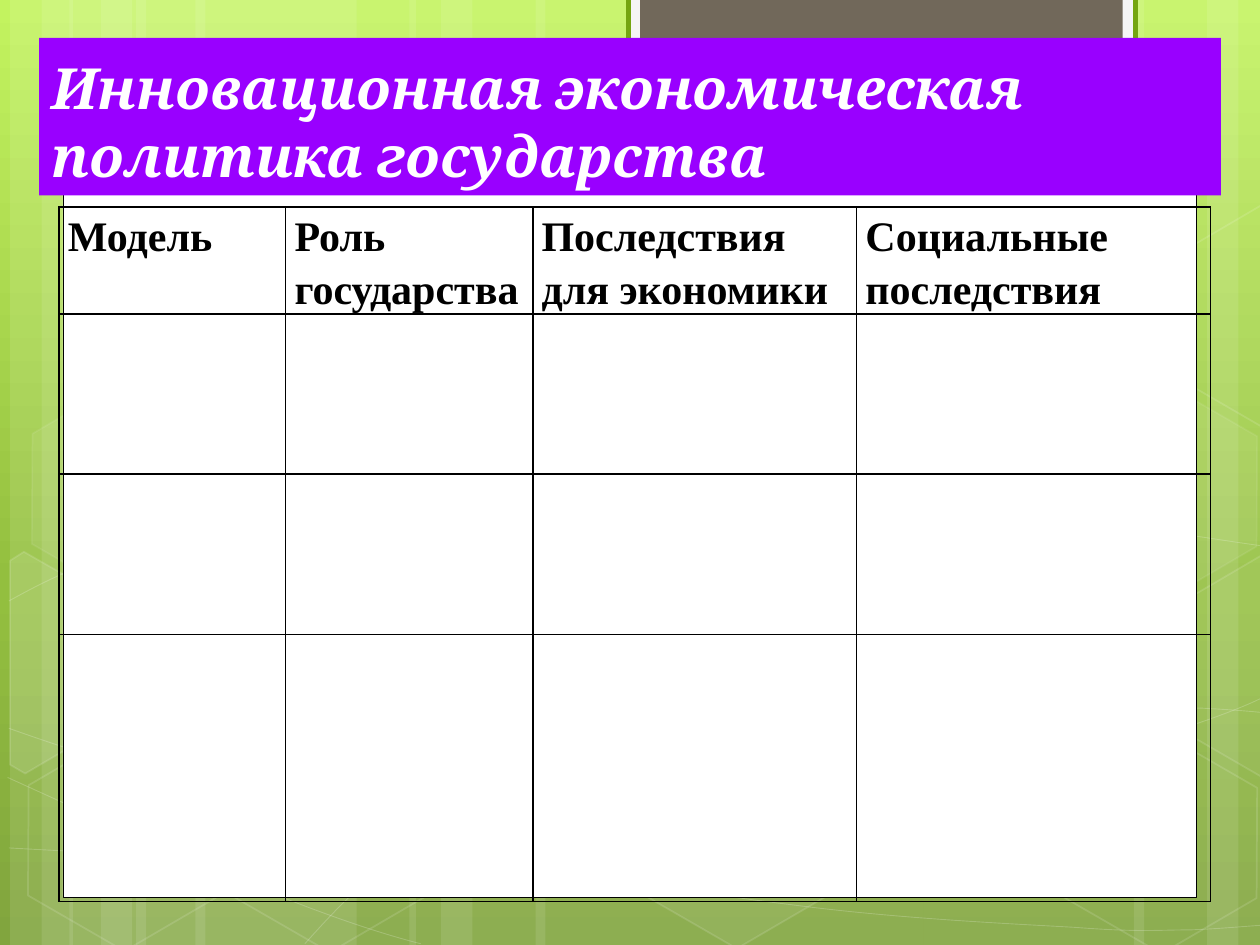
from lxml import etree
from copy import deepcopy
from pptx import Presentation
from pptx.dml.color import RGBColor
from pptx.enum.shapes import MSO_SHAPE
from pptx.enum.text import MSO_ANCHOR, PP_ALIGN
from pptx.oxml.ns import qn
from pptx.util import Cm, Pt

RECTANGLE, HEXAGON = MSO_SHAPE.RECTANGLE, MSO_SHAPE.HEXAGON
BOTTOM, TOP, LEFT = MSO_ANCHOR.BOTTOM, MSO_ANCHOR.TOP, PP_ALIGN.LEFT

WHITE = RGBColor(0xFF, 0xFF, 0xFF)
BLACK = RGBColor(0x00, 0x00, 0x00)
PURPLE = RGBColor(0x99, 0x00, 0xFF)
BROWN = RGBColor(0x71, 0x68, 0x5A)
PALE = RGBColor(0xF5, 0xF5, 0xF5)
GREEN = RGBColor(0x74, 0xA5, 0x10)
GRADIENT = [(0, RGBColor(0xC3, 0xF3, 0x5F)), (0.62, RGBColor(0x93, 0xBF, 0x3F)),
            (1, RGBColor(0x81, 0xA5, 0x3E))]

TITLE = "Инновационная экономическая политика государства"
HEADERS = ["Модель", "Роль государства", "Последствия для экономики", "Социальные последствия"]
TABLE_LEFT, TABLE_TOP = Cm(1.19), Cm(4.17)
COLUMN_WIDTHS = [Cm(4.57), Cm(4.98), Cm(6.53), Cm(7.13)]
ROW_HEIGHTS = [Cm(2.16), Cm(3.23), Cm(3.23), Cm(5.38)]

WIDTH, HEIGHT = 10, 7.5
STRIPES = [(1.08, 1.75), (0.08, 0.5), (0.33, 0.83), (1.55, 1.75), (0.55, 0.5), (0.8, 0.83),
           (7.33, 1.75), (9.58, 0.5), (9, 0.83), (4.25, 3.08), (3.25, 0.5), (3.5, 0.83)]
CURVES = [
    [(0.07, 6.73), (0.61, 6.76), (1.15, 6.79), (1.9, 6.78), (2.65, 6.77), (3.58, 6.75),
     (4.58, 6.65), (5.58, 6.55), (7, 6.36), (7.92, 6.17), (8.83, 5.98), (9.77, 5.68),
     (10.07, 5.51)],
    [(0.07, 4.77), (0.36, 4.61), (0.65, 4.46), (1.21, 4.31), (1.78, 4.16), (2.59, 3.94),
     (3.47, 3.87), (4.36, 3.8), (5.44, 3.79), (6.54, 3.87), (7.64, 3.95), (9.47, 4.26),
     (10.07, 4.34)],
    [(0.06, 6.17), (1.27, 6.72), (2.47, 7.27), (3.34, 7.49)],
    [(0.07, 5.78), (0.38, 5.89), (0.7, 6), (1.28, 6.16), (1.86, 6.31), (2.73, 6.56),
     (3.57, 6.73), (4.4, 6.9), (5.45, 7.08), (6.28, 7.18), (7.11, 7.29), (8, 7.33),
     (8.53, 7.36), (9.05, 7.4), (9.19, 7.38), (9.45, 7.38), (9.71, 7.37), (9.89, 7.35),
     (10.07, 7.34)],
    [(2.42, 7.49), (2.6, 7.29), (2.78, 7.09), (3.02, 6.91), (3.26, 6.73), (3.6, 6.53),
     (3.88, 6.39), (4.16, 6.25), (4.33, 6.19), (4.7, 6.09), (5.06, 5.99), (5.73, 5.85),
     (6.08, 5.78), (6.44, 5.71), (6.49, 5.71), (6.8, 5.69), (7.11, 5.66), (7.6, 5.63),
     (7.94, 5.62), (8.29, 5.61), (9.2, 5.62), (9.53, 5.62), (9.71, 5.63), (9.88, 5.64),
     (10.06, 5.66)],
]
HEXAGONS = [(4.97, 5.89, 6, 12), (0.11, 5.91, 0, 12), (0.14, 3.12, 7, 8),
            (1.74, 5.92, 0, 12), (8.34, 5.93, 0, 12), (8.34, 3.14, 7, 8)]
CUT_HEXAGONS = [
    ([(0.08, 4.45), (0.19, 4.38), (0.96, 4.82), (0.95, 5.7), (0.2, 6.14), (0.08, 6.07)], 10),
    ([(9.26, 4.85), (10.01, 4.41), (10.09, 4.46), (10.09, 6.13), (10.02, 6.17), (9.26, 5.73)], 4),
    ([(9.26, 2.07), (10.01, 1.63), (10.1, 1.68), (10.09, 3.35), (10.02, 3.39), (9.26, 2.95)], 0),
]
PANELS = [((0.5, 0.36, 9, 6.76), WHITE, BLACK, 0.5),
          ((4.99, -0.02, 4.02, 0.76), PALE, GREEN, 3),
          ((5.08, -0.02, 3.83, 0.68), BROWN, None, 0)]


def inches(value):
    return Cm(value * 2.54)


def set_alpha(fill, percent):
    color = fill._xPr.find(qn("a:solidFill")).find(qn("a:srgbClr"))
    etree.SubElement(color, qn("a:alpha")).set("val", str(percent * 1000))


def paint(shape, color=None, line=None, width=0, alpha=100, line_alpha=100):
    shape.shadow.inherit = False
    if color is None or alpha == 0:
        shape.fill.background()
    else:
        shape.fill.solid()
        shape.fill.fore_color.rgb = color
        if alpha < 100:
            set_alpha(shape.fill, alpha)
    if line is None:
        shape.line.fill.background()
    else:
        shape.line.color.rgb = line
        shape.line.width = Pt(width)
        if line_alpha < 100:
            set_alpha(shape.line.fill, line_alpha)


def add_preset(slide, preset, box):
    return slide.shapes.add_shape(preset, *map(inches, box))


def add_outline(slide, points, close):
    points = [(inches(x), inches(y)) for x, y in points]
    builder = slide.shapes.build_freeform(*points[0])
    builder.add_line_segments(points[1:], close=close)
    return builder.convert_to_shape()


def add_curve(slide, points):
    shape = add_outline(slide, points, False)
    segments = list(shape._element.iter(qn("a:lnTo")))
    for start in range(0, len(segments), 3):
        curve = etree.Element(qn("a:cubicBezTo"))
        segments[start].addprevious(curve)
        for segment in segments[start:start + 3]:
            curve.append(segment[0])
            segment.getparent().remove(segment)
    return shape


def format_text(paragraph, font_name, size, color, italic=False):
    paragraph.alignment = LEFT
    for run in paragraph.runs:
        run.font.name = font_name
        run.font.size = Pt(size)
        run.font.bold = True
        run.font.italic = italic
        run.font.color.rgb = color


def add_background(slide):
    fill = slide.background.fill
    fill.gradient()
    fill.gradient_angle = 270
    stop_list = fill._xPr.find(qn("a:gradFill")).find(qn("a:gsLst"))
    stop_list.append(deepcopy(stop_list[-1]))
    for stop, (position, color) in zip(fill.gradient_stops, GRADIENT):
        stop.position = position
        stop.color.rgb = color


def add_decoration(slide):
    for left, width in STRIPES:
        paint(add_preset(slide, RECTANGLE, (left, 0, width, HEIGHT)), WHITE, alpha=10)
    for points in CURVES:
        paint(add_curve(slide, points), line=WHITE, width=0.5, line_alpha=20)
    for left, top, alpha, line_alpha in HEXAGONS:
        hexagon = add_preset(slide, HEXAGON, (left, top, 1.75, 1.52))
        hexagon.adjustments[0] = 0.285
        hexagon.rotation = 30
        paint(hexagon, WHITE, WHITE, 1, alpha, line_alpha)
    for points, alpha in CUT_HEXAGONS:
        paint(add_outline(slide, points, True), WHITE, WHITE, 1, alpha, 12)
    for box, color, line, width in PANELS:
        paint(add_preset(slide, RECTANGLE, box), color, line, width)


def add_title(slide):
    title = add_preset(slide, RECTANGLE, (0.31, 0.3, 9.38, 1.25))
    paint(title, PURPLE)
    title.text_frame.text = TITLE
    title.text_frame.word_wrap = True
    title.text_frame.vertical_anchor = BOTTOM
    format_text(title.text_frame.paragraphs[0], "Cambria", 32.4, WHITE, italic=True)


def add_borders(cell):
    properties = cell._tc.get_or_add_tcPr()
    for index, side in enumerate(("a:lnL", "a:lnR", "a:lnT", "a:lnB")):
        border = etree.Element(qn(side), w=str(Pt(1)))
        fill = etree.SubElement(border, qn("a:solidFill"))
        etree.SubElement(fill, qn("a:srgbClr"), val=str(BLACK))
        properties.insert(index, border)


def add_model_table(slide):
    table = slide.shapes.add_table(len(ROW_HEIGHTS), len(HEADERS), TABLE_LEFT, TABLE_TOP,
                                   sum(COLUMN_WIDTHS), sum(ROW_HEIGHTS)).table
    table.first_row = table.horz_banding = False
    for column, width in zip(table.columns, COLUMN_WIDTHS):
        column.width = width
    for row, height in zip(table.rows, ROW_HEIGHTS):
        row.height = height
    for cell in table.iter_cells():
        cell.fill.background()
        cell.margin_left = cell.margin_right = inches(0.07)
        cell.margin_top = cell.margin_bottom = 0
        cell.vertical_anchor = TOP
        add_borders(cell)
    for cell, header in zip(table.rows[0].cells, HEADERS):
        cell.text_frame.text = header
        paragraph = cell.text_frame.paragraphs[0]
        paragraph.line_spacing = 1.15
        paragraph.space_after = Pt(10)
        format_text(paragraph, "Times New Roman", 24, BLACK)


def main():
    presentation = Presentation()
    presentation.slide_width, presentation.slide_height = inches(WIDTH), inches(HEIGHT)
    slide = presentation.slides.add_slide(presentation.slide_layouts[6])
    add_background(slide)
    add_decoration(slide)
    add_title(slide)
    add_model_table(slide)
    presentation.save("out.pptx")


if __name__ == "__main__":
    main()
